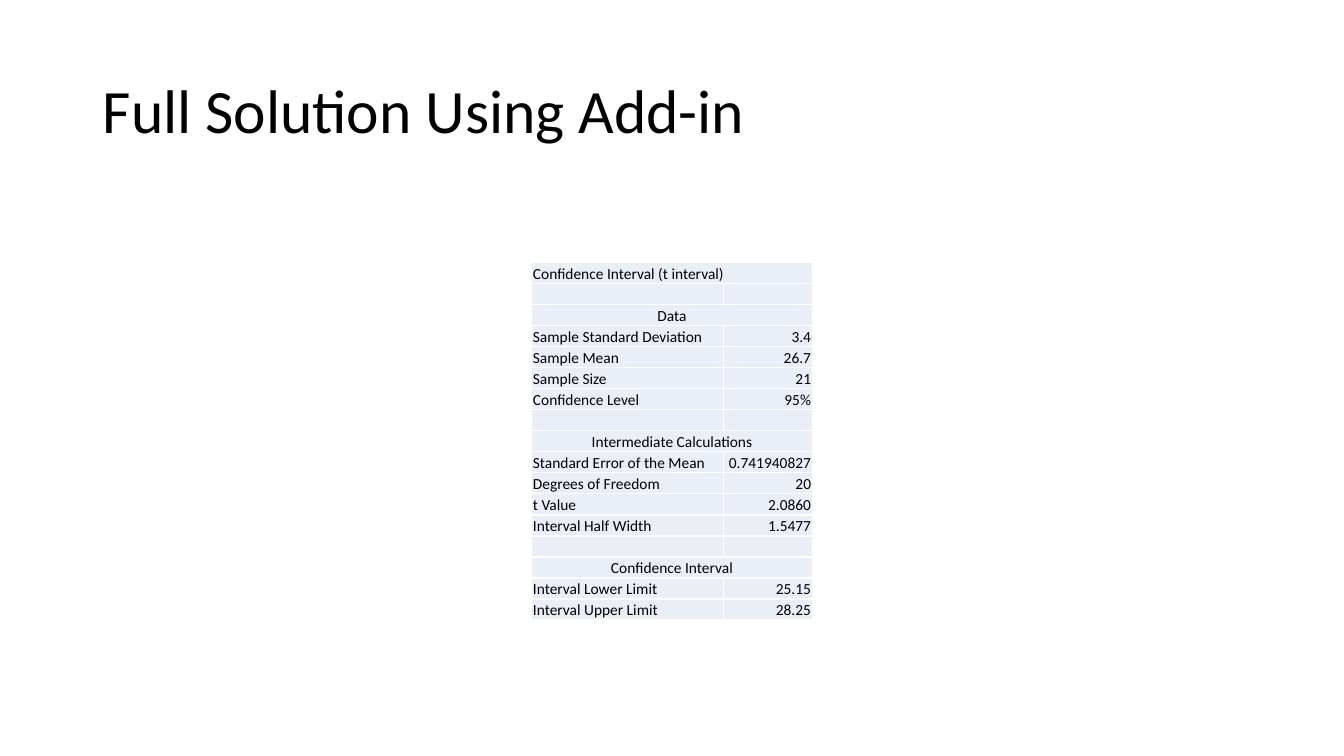
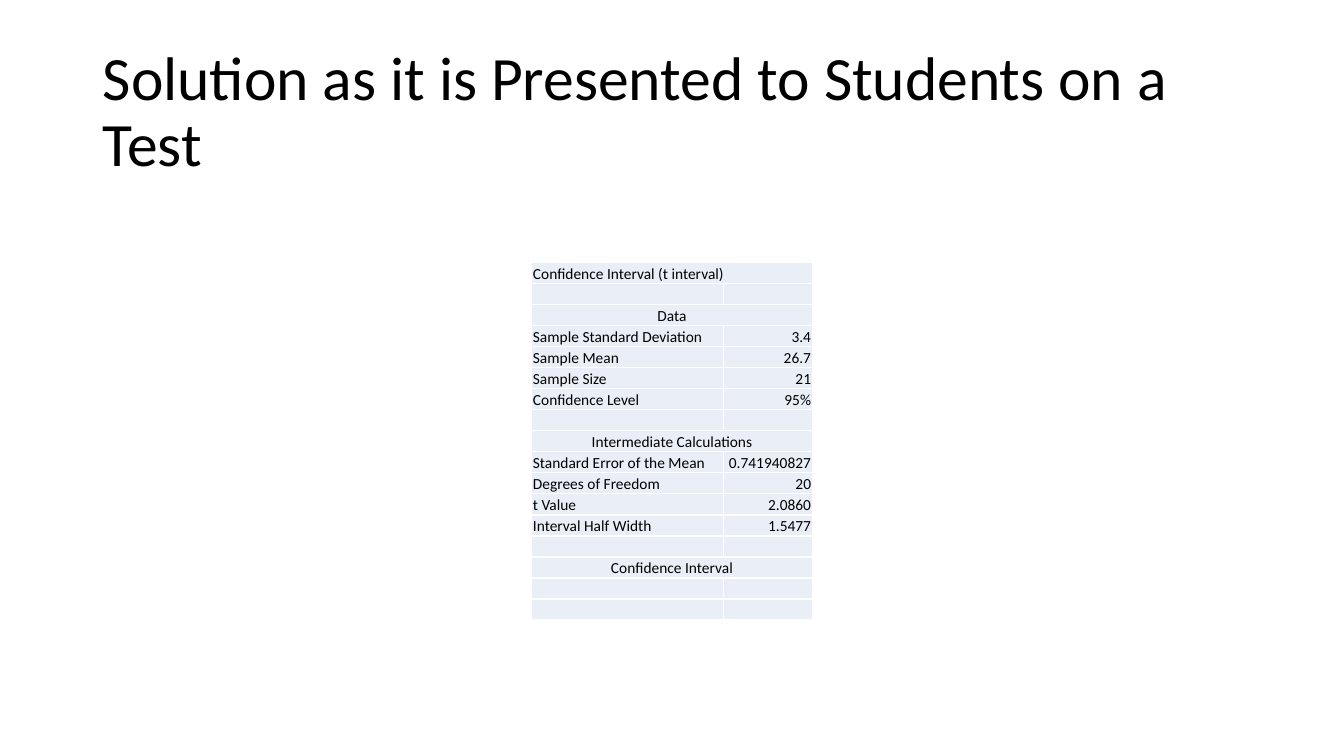
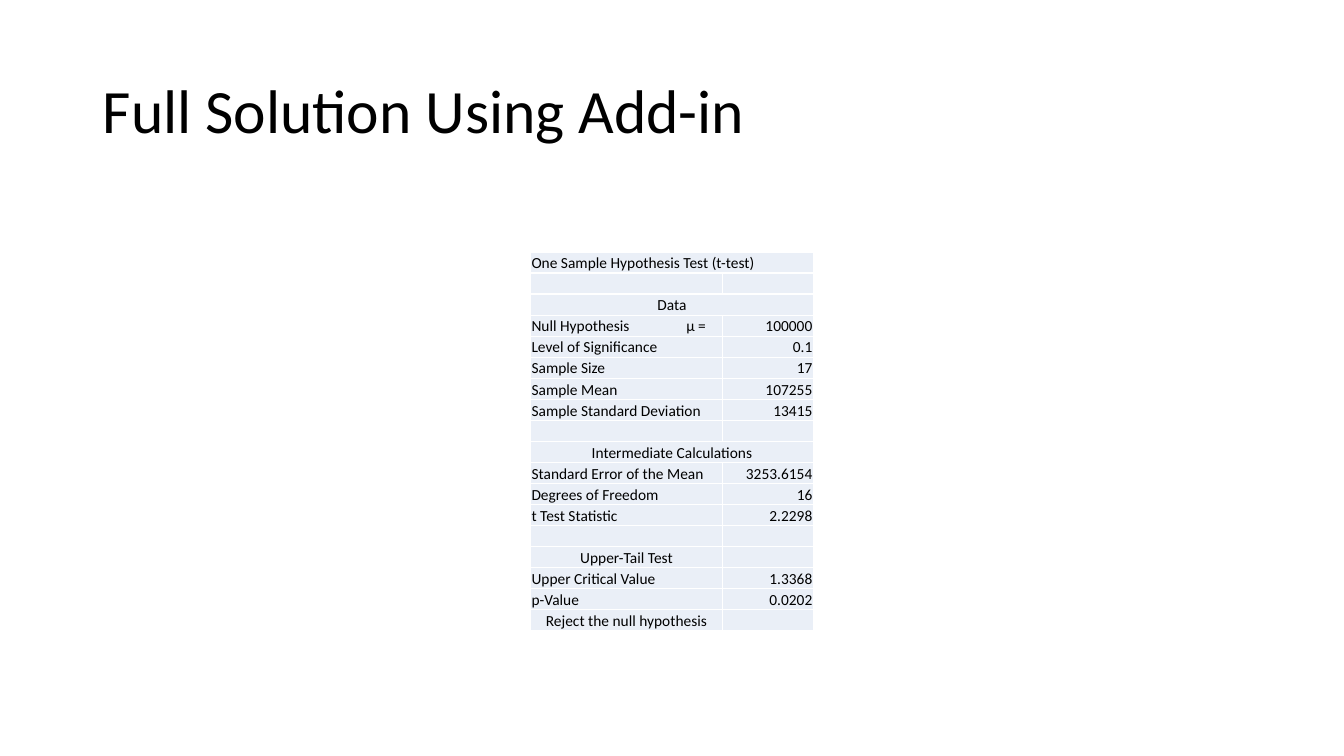
"""Build three slides that show t interval and t test worksheets as tables."""
from lxml.etree import SubElement
from pptx import Presentation
from pptx.dml.color import RGBColor
from pptx.enum.text import MSO_ANCHOR, PP_ALIGN
from pptx.oxml import parse_xml
from pptx.oxml.ns import nsdecls, qn
from pptx.util import Cm, Pt

BLACK = RGBColor(0x00, 0x00, 0x00)
PALE_BLUE = RGBColor(0xEA, 0xEF, 0xF7)
BORDER_COLOR = "FFFFFF"
FONT = "Calibri"
SLIDE_WIDTH, SLIDE_HEIGHT = Cm(33.87), Cm(19.05)
TABLE_MIDDLE = Cm(11.12)
ROW_HEIGHT = Cm(0.53)
CELL_INSET = Cm(0.03)
TAB_STOP = Cm(3.9)

BLANK = ("", "")
CENTERED = {"Data", "Intermediate Calculations", "Confidence Interval",
            "Upper-Tail Test", "Reject the null hypothesis"}

interval_rows = [
    ("Confidence Interval (t interval)", None),
    BLANK,
    ("Data", None),
    ("Sample Standard Deviation", "3.4"),
    ("Sample Mean", "26.7"),
    ("Sample Size", "21"),
    ("Confidence Level", "95%"),
    BLANK,
    ("Intermediate Calculations", None),
    ("Standard Error of the Mean", "0.741940827"),
    ("Degrees of Freedom", "20"),
    ("t Value", "2.0860"),
    ("Interval Half Width", "1.5477"),
    BLANK,
    ("Confidence Interval", None),
]
interval_limits = [
    ("Interval Lower Limit", "25.15"),
    ("Interval Upper Limit", "28.25"),
]
test_rows = [
    ("One Sample Hypothesis Test (t-test)", None),
    BLANK,
    ("Data", None),
    ("Null Hypothesis\tμ =", "100000"),
    ("Level of Significance", "0.1"),
    ("Sample Size", "17"),
    ("Sample Mean", "107255"),
    ("Sample Standard Deviation", "13415"),
    BLANK,
    ("Intermediate Calculations", None),
    ("Standard Error of the Mean", "3253.6154"),
    ("Degrees of Freedom", "16"),
    ("t Test Statistic", "2.2298"),
    BLANK,
    ("Upper-Tail Test", ""),
    ("Upper Critical Value", "1.3368"),
    ("p-Value", "0.0202"),
    ("Reject the null hypothesis", ""),
]
interval_widths = (Cm(4.83), Cm(2.24))
test_widths = (Cm(4.85), Cm(2.29))

slides = [
    ("Full Solution Using Add-in", interval_rows + interval_limits, interval_widths),
    ("Solution as it is Presented to Students on a Test",
     interval_rows + [BLANK] * len(interval_limits), interval_widths),
    ("Full Solution Using Add-in", test_rows, test_widths),
]


def set_font(paragraph, size):
    paragraph.font.name = FONT
    paragraph.font.size = Pt(size)
    paragraph.font.color.rgb = BLACK


def fill_cell(cell, text, alignment):
    cell.fill.solid()
    cell.fill.fore_color.rgb = PALE_BLUE
    cell.vertical_anchor = MSO_ANCHOR.BOTTOM
    cell.margin_left = cell.margin_right = cell.margin_top = CELL_INSET
    cell.margin_bottom = 0
    properties = cell._tc.get_or_add_tcPr()
    for position, side in enumerate(("lnL", "lnR", "lnT", "lnB")):
        properties.insert(position, parse_xml(
            f'<a:{side} {nsdecls("a")} w="12700"><a:solidFill>'
            f'<a:srgbClr val="{BORDER_COLOR}"/></a:solidFill></a:{side}>'))
    paragraph = cell.text_frame.paragraphs[0]
    paragraph.text = text
    paragraph.alignment = alignment
    if "\t" in text:
        tabs = SubElement(paragraph._p.get_or_add_pPr(), qn("a:tabLst"))
        SubElement(tabs, qn("a:tab"), pos=str(TAB_STOP), algn="l")
    set_font(paragraph, 11)
    if not text:
        SubElement(paragraph._p, qn("a:endParaRPr"), sz="1100")


presentation = Presentation()
presentation.slide_width, presentation.slide_height = SLIDE_WIDTH, SLIDE_HEIGHT

for title, rows, widths in slides:
    slide = presentation.slides.add_slide(presentation.slide_layouts[6])

    title_box = slide.shapes.add_textbox(Cm(2.34), Cm(1.02), Cm(29.21), Cm(3.68))
    title_box.text_frame.word_wrap = True
    title_box.text_frame.vertical_anchor = MSO_ANCHOR.MIDDLE
    title_paragraph = title_box.text_frame.paragraphs[0]
    title_paragraph.text = title
    title_paragraph.line_spacing = 0.9
    set_font(title_paragraph, 44)

    width, height = sum(widths), ROW_HEIGHT * len(rows)
    table = slide.shapes.add_table(
        len(rows), len(widths), (SLIDE_WIDTH - width) // 2,
        TABLE_MIDDLE - height // 2, width, height).table
    table.first_row = table.horz_banding = False
    for column, column_width in zip(table.columns, widths):
        column.width = column_width
    for row_index, (label, value) in enumerate(rows):
        table.rows[row_index].height = ROW_HEIGHT
        label_cell, value_cell = table.cell(row_index, 0), table.cell(row_index, 1)
        if value is None:
            label_cell.merge(value_cell)
        fill_cell(label_cell, label, PP_ALIGN.CENTER if label in CENTERED else PP_ALIGN.LEFT)
        fill_cell(value_cell, value or "", PP_ALIGN.RIGHT)

presentation.save("out.pptx")
